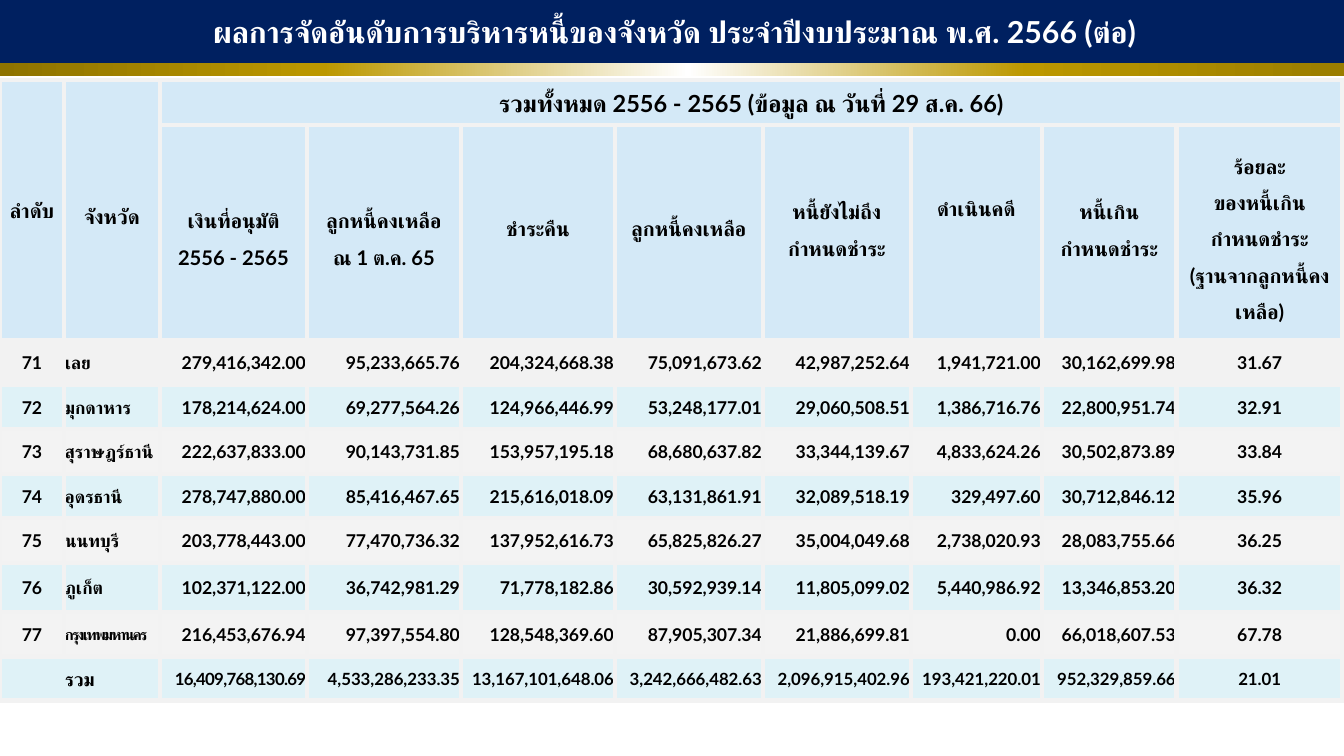
from lxml import etree
from pptx import Presentation
from pptx.dml.color import RGBColor
from pptx.enum.shapes import MSO_SHAPE as SHAPE
from pptx.enum.text import MSO_ANCHOR as ANCHOR, PP_ALIGN as ALIGN
from pptx.oxml import parse_xml
from pptx.oxml.ns import nsdecls, qn
from pptx.util import Pt

PX = 914400 / 121
FONT = "Lato"
HEAD, BLUE, GREY = "CAE4F6", "D7EFF5", "F2F2F2"
TITLE = "ผลการจัดอันดับการบริหารหนี้ของจังหวัด ประจำปีงบประมาณ พ.ศ. 2566 (ต่อ)"
PERIOD = "รวมทั้งหมด 2556 - 2565 (ข้อมูล ณ วันที่ 29 ส.ค. 66)"
COLS = [64, 96, 147, 154, 154, 148, 148, 131, 135, 166]
ROWS = [45, 215, 45, 44, 45, 44, 45, 49, 45, 44]
GOLD = [(0, "8E7300"), (24, "BC9800"), (51, "FFFFFF"), (76, "BC9800"), (100, "9A7D00")]
HEADERS = [
    ("เงินที่อนุมัติ\n2556 - 2565", 0),
    ("ลูกหนี้คงเหลือ\nณ 1 ต.ค. 65", 0),
    ("ชำระคืน", 20),
    ("ลูกหนี้คงเหลือ", 20),
    ("หนี้ยังไม่ถึง\nกำหนดชำระ", 18),
    ("ดำเนินคดี", 60),
    ("หนี้เกิน\nกำหนดชำระ", 18),
    ("ร้อยละ\nของหนี้เกิน\nกำหนดชำระ\n(ฐานจากลูกหนี้คงเหลือ)", 0),
]
DATA = [
    ("71", "เลย", "279,416,342.00", "95,233,665.76", "204,324,668.38",
     "75,091,673.62", "42,987,252.64", "1,941,721.00", "30,162,699.98", "31.67"),
    ("72", "มุกดาหาร", "178,214,624.00", "69,277,564.26", "124,966,446.99",
     "53,248,177.01", "29,060,508.51", "1,386,716.76", "22,800,951.74", "32.91"),
    ("73", "สุราษฎร์ธานี", "222,637,833.00", "90,143,731.85", "153,957,195.18",
     "68,680,637.82", "33,344,139.67", "4,833,624.26", "30,502,873.89", "33.84"),
    ("74", "อุดรธานี", "278,747,880.00", "85,416,467.65", "215,616,018.09",
     "63,131,861.91", "32,089,518.19", "329,497.60", "30,712,846.12", "35.96"),
    ("75", "นนทบุรี", "203,778,443.00", "77,470,736.32", "137,952,616.73",
     "65,825,826.27", "35,004,049.68", "2,738,020.93", "28,083,755.66", "36.25"),
    ("76", "ภูเก็ต", "102,371,122.00", "36,742,981.29", "71,778,182.86",
     "30,592,939.14", "11,805,099.02", "5,440,986.92", "13,346,853.20", "36.32"),
    ("77", "กรุงเทพมหานคร", "216,453,676.94", "97,397,554.80", "128,548,369.60",
     "87,905,307.34", "21,886,699.81", "0.00", "66,018,607.53", "67.78"),
]
TOTAL = ["16,409,768,130.69", "4,533,286,233.35", "13,167,101,648.06", "3,242,666,482.63",
         "2,096,915,402.96", "193,421,220.01", "952,329,859.66", "21.01"]


def px(n):
    return round(n * PX)


def rgb(value):
    return RGBColor.from_string(value)


def write(tf, text, size=10.5, color="000000", align=ALIGN.CENTER, line=None, spc=0):
    for i, words in enumerate(text.split("\n")):
        p = tf.add_paragraph() if i else tf.paragraphs[0]
        p.alignment = align
        if line:
            p.line_spacing = line
        r = p.add_run()
        r.text = words
        r.font.size, r.font.bold, r.font.name = Pt(size), True, FONT
        r.font.color.rgb = rgb(color)
        rPr = r.font._element
        etree.SubElement(rPr, qn("a:cs")).set("typeface", FONT)
        if spc:
            rPr.set("spc", str(round(spc * 100)))


def style_cell(cell, color, alpha):
    cell.fill.solid()
    cell.fill.fore_color.rgb = rgb(color)
    tcPr = cell._tc.get_or_add_tcPr()
    clr = tcPr.find(".//" + qn("a:srgbClr"))
    etree.SubElement(clr, qn("a:alpha")).set("val", str(alpha * 1000))
    for i, side in enumerate("LRTB"):
        tcPr.insert(i, parse_xml(
            f'<a:ln{side} {nsdecls("a")} w="{Pt(3)}"><a:solidFill>'
            f'<a:srgbClr val="{GREY}"/></a:solidFill></a:ln{side}>'))
    cell.margin_left = cell.margin_top = cell.margin_right = px(1)
    cell.margin_bottom = 0
    cell.vertical_anchor = ANCHOR.MIDDLE


def fill_header(tbl):
    tbl.cell(0, 0).merge(tbl.cell(1, 0))
    tbl.cell(0, 1).merge(tbl.cell(1, 1))
    tbl.cell(0, 2).merge(tbl.cell(0, 9))
    write(tbl.cell(0, 2).text_frame, PERIOD, size=14)
    heads = [(0, "ลำดับ", 12), (0, "จังหวัด", 0)] + [(1, *h) for h in HEADERS]
    for c, (row, text, lift) in enumerate(heads):
        cell = tbl.cell(row, c)
        cell.margin_bottom = px(lift)
        write(cell.text_frame, text, size=12, line=1.5)


def fill_body(tbl):
    for i, record in enumerate(DATA, 2):
        for c, text in enumerate(record):
            align = ALIGN.CENTER if c in (0, 9) else ALIGN.LEFT if c == 1 else ALIGN.RIGHT
            tight = c == 1 and i == 8
            write(tbl.cell(i, c).text_frame, text, align=align,
                  size=9 if tight else 10.5, spc=-1 if tight else 0)


def fill_total(tbl):
    tbl.cell(9, 0).merge(tbl.cell(9, 1))
    write(tbl.cell(9, 0).text_frame, "รวม", size=11)
    for c, text in enumerate(TOTAL, 2):
        write(tbl.cell(9, c).text_frame, text, size=10, spc=-0.4 if c == 2 else 0,
              align=ALIGN.CENTER if c == 9 else ALIGN.RIGHT)


def add_debt_table(s, x, y):
    frame = s.shapes.add_table(len(ROWS), len(COLS), px(x), px(y), px(sum(COLS)), px(sum(ROWS)))
    tbl = frame.table
    tbl.first_row = tbl.horz_banding = False
    for col, w in zip(tbl.columns, COLS):
        col.width = px(w)
    for i, (row, h) in enumerate(zip(tbl.rows, ROWS)):
        row.height = px(h)
        if i < 2:
            look = HEAD, 80
        elif i % 2:
            look = BLUE, 80
        else:
            look = GREY, 100 if i == 2 else 90
        for cell in row.cells:
            style_cell(cell, *look)
    fill_header(tbl)
    fill_body(tbl)
    fill_total(tbl)


def add_bar(group, x, y, w, h):
    sp = group.shapes.add_shape(SHAPE.RECTANGLE, px(x), px(y), px(w), px(h))
    sp.shadow.inherit = False
    sp.line.fill.background()
    return sp


def add_title(s, x, y, w, h):
    group = s.shapes.add_group_shape()
    gold = add_bar(group, x, y, w, h)
    gold.fill.gradient()
    gold.fill.gradient_angle = 0
    stops = gold._element.spPr.find(".//" + qn("a:gsLst"))
    for gs in list(stops):
        stops.remove(gs)
    for pos, color in GOLD:
        stops.append(parse_xml(f'<a:gs {nsdecls("a")} pos="{pos * 1000}">'
                               f'<a:srgbClr val="{color}"/></a:gs>'))
    navy = add_bar(group, x, y, w, h - 13)
    navy.fill.solid()
    navy.fill.fore_color.rgb = rgb("002060")
    tf = navy.text_frame
    tf.word_wrap = True
    tf.vertical_anchor = ANCHOR.MIDDLE
    write(tf, TITLE, size=18, color="FFFFFF")


def main():
    prs = Presentation()
    prs.slide_width, prs.slide_height = px(1344), px(756)
    s = prs.slides.add_slide(prs.slide_layouts[6])
    add_debt_table(s, 0, 80)
    add_title(s, 0, 0, 1349, 76)
    prs.save("out.pptx")


if __name__ == "__main__":
    main()
